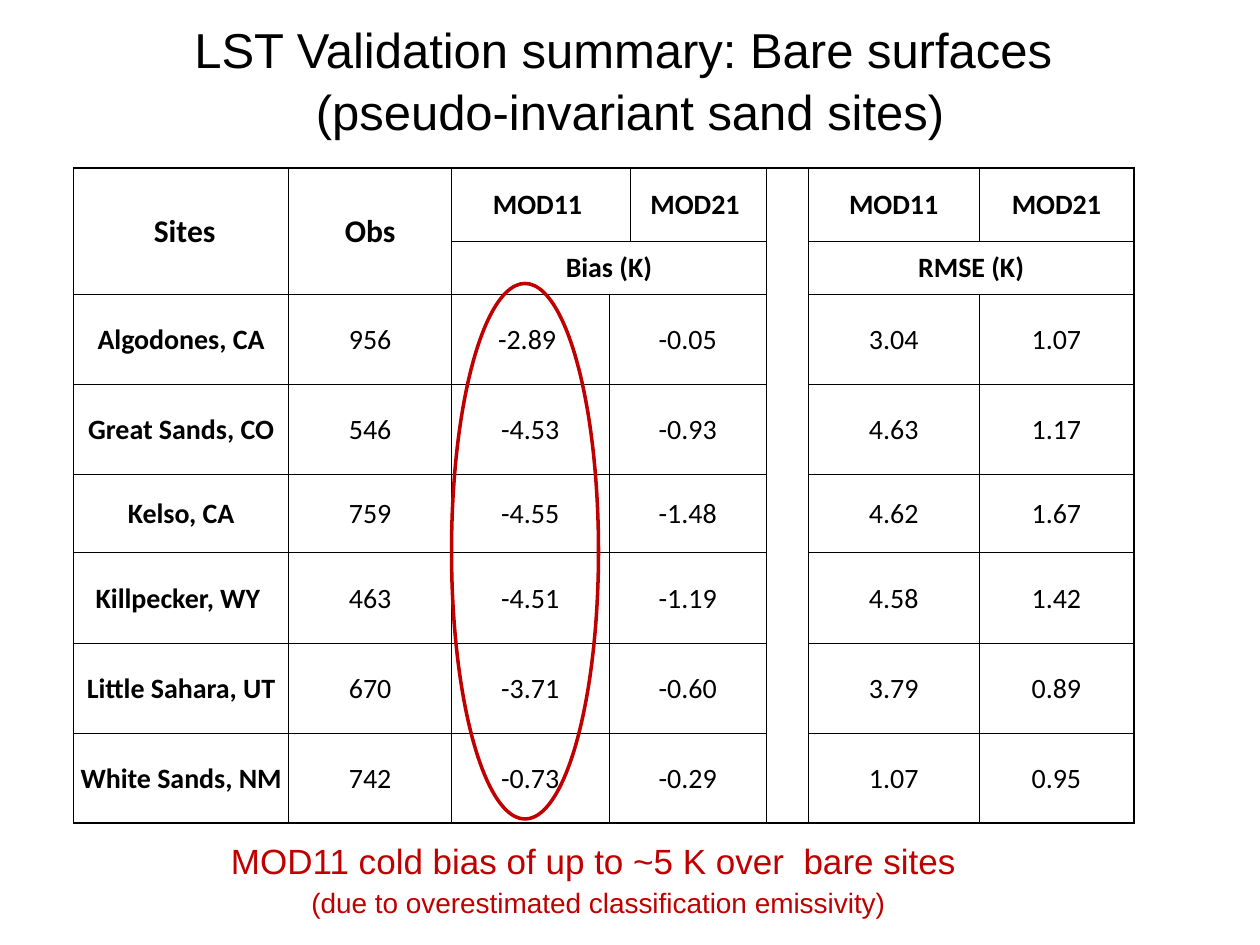
from lxml import etree
from pptx import Presentation
from pptx.dml import color
from pptx.enum import shapes, text
from pptx.oxml import ns
from pptx.util import Pt

BLACK, WHITE, RED = "000000", "FFFFFF", "C00000"
COLUMN_WIDTHS = [123, 93, 90, 12, 78, 24, 97.5, 88.5]
ROW_HEIGHTS = [42, 30, 51.5, 51.5, 45, 51.5, 51.5, 51.5]
GAP_COLUMN = 5
HEADER_ROWS = 2
UNFILLED_ROWS = {0, 1, 3, 4}
HEADINGS = {
    (0, 0): "\N{NO-BREAK SPACE}Sites",
    (0, 1): "Obs",
    (0, 2): "MOD11 ",
    (0, 4): "MOD21 ",
    (0, 6): "MOD11",
    (0, 7): "MOD21",
    (1, 2): "Bias (K)",
    (1, 6): "RMSE (K)",
}
HEADING_SPANS = [(0, 0, 1, 0), (0, 1, 1, 1), (0, 2, 0, 3), (1, 2, 1, 4), (1, 6, 1, 7)]
SITES = [
    ("Algodones, CA", "956", "-2.89 ", "-0.05", "3.04", "1.07"),
    ("Great Sands, CO", "546", "-4.53", "-0.93", "4.63", "1.17"),
    ("Kelso, CA", "759", "-4.55", "-1.48", "4.62", "1.67"),
    ("Killpecker, WY ", "463", "-4.51", "-1.19", "4.58", "1.42"),
    ("Little Sahara, UT", "670", "-3.71", "-0.60", "3.79", "0.89"),
    ("White Sands, NM", "742", "-0.73", "-0.29", "1.07", "0.95"),
]
SITE_COLUMNS = [0, 1, 2, 3, 6, 7]


def rgb(value):
    return color.RGBColor.from_string(value)


def place(shape, box):
    shape.left, shape.top, shape.width, shape.height = map(Pt, box)


def write_lines(frame, lines, font_color, spacing):
    frame.word_wrap = True
    frame.auto_size = text.MSO_AUTO_SIZE.NONE
    frame.vertical_anchor = text.MSO_ANCHOR.TOP
    for index, (line, size) in enumerate(lines):
        paragraph = frame.add_paragraph() if index else frame.paragraphs[0]
        paragraph.text = line
        paragraph.alignment = text.PP_ALIGN.CENTER
        paragraph.line_spacing = spacing
        paragraph.font.name = "Arial"
        paragraph.font.size = Pt(size)
        paragraph.font.color.rgb = rgb(font_color)


def add_title(slide, box):
    title = slide.shapes.title
    place(title, box)
    lines = [
        ("LST Validation summary: Bare surfaces ", 28),
        ("(pseudo-invariant sand sites)", 28),
    ]
    write_lines(title.text_frame, lines, BLACK, 1.05)


def add_conclusion(slide, box):
    conclusion = slide.shapes.add_textbox(*map(Pt, box))
    lines = [
        ("MOD11 cold bias of up to ~5 K over  bare sites ", 20),
        ("(due to overestimated classification emissivity)", 16),
    ]
    write_lines(conclusion.text_frame, lines, RED, 1.1)


def set_border(cell, side, width):
    properties = cell._tc.get_or_add_tcPr()
    line = etree.SubElement(properties, ns.qn(f"a:ln{side}"), w=str(Pt(width)))
    if width:
        fill = etree.SubElement(line, ns.qn("a:solidFill"))
        etree.SubElement(fill, ns.qn("a:srgbClr"), val=BLACK)
    else:
        etree.SubElement(line, ns.qn("a:noFill"))


def format_cell(cell, row, column):
    last_row, last_column = len(ROW_HEIGHTS) - 1, len(COLUMN_WIDTHS) - 1
    inner = 0 if column == GAP_COLUMN else 0.5
    set_border(cell, "L", 1 if column == 0 else 0.5)
    set_border(cell, "R", 1 if column + cell.span_width > last_column else 0.5)
    set_border(cell, "T", 1 if row == 0 else inner)
    set_border(cell, "B", 1 if row + cell.span_height > last_row else inner)
    if row in UNFILLED_ROWS:
        cell.fill.background()
    else:
        cell.fill.solid()
        cell.fill.fore_color.rgb = rgb(WHITE)
    cell.margin_left = cell.margin_right = cell.margin_top = Pt(0.72)
    cell.margin_bottom = 0
    cell.vertical_anchor = text.MSO_ANCHOR.MIDDLE
    paragraph = cell.text_frame.paragraphs[0]
    paragraph.alignment = text.PP_ALIGN.CENTER
    paragraph.font.name = "Calibri"
    paragraph.font.size = Pt(18 if row == 0 and column < 2 else 16)
    paragraph.font.bold = row < HEADER_ROWS or column == 0
    paragraph.font.color.rgb = rgb(BLACK)


def add_validation_table(slide, left, top):
    table = slide.shapes.add_table(
        len(ROW_HEIGHTS), len(COLUMN_WIDTHS), Pt(left), Pt(top),
        Pt(sum(COLUMN_WIDTHS)), Pt(sum(ROW_HEIGHTS)),
    ).table
    table.first_row = table.horz_banding = False
    for column, width in zip(table.columns, COLUMN_WIDTHS):
        column.width = Pt(width)
    for row, height in zip(table.rows, ROW_HEIGHTS):
        row.height = Pt(height)

    site_spans = [(row, 3, row, 4) for row in range(HEADER_ROWS, len(ROW_HEIGHTS))]
    for first_row, first_column, last_row, last_column in HEADING_SPANS + site_spans:
        table.cell(first_row, first_column).merge(table.cell(last_row, last_column))

    entries = dict(HEADINGS)
    for row, site in enumerate(SITES, HEADER_ROWS):
        entries.update({(row, column): value for column, value in zip(SITE_COLUMNS, site)})
    for (row, column), value in entries.items():
        table.cell(row, column).text = value

    for row in range(len(ROW_HEIGHTS)):
        for column in range(len(COLUMN_WIDTHS)):
            cell = table.cell(row, column)
            if not cell.is_spanned:
                format_cell(cell, row, column)


def add_bias_highlight(slide, box):
    highlight = slide.shapes.add_shape(shapes.MSO_SHAPE.OVAL, *map(Pt, box))
    highlight.shadow.inherit = False
    highlight.fill.background()
    highlight.line.color.rgb = rgb(RED)
    highlight.line.width = Pt(2)


def main():
    presentation = Presentation()
    presentation.slide_width, presentation.slide_height = Pt(720), Pt(540)
    slide = presentation.slides.add_slide(presentation.slide_layouts[5])
    add_title(slide, (36, 6, 648, 48))
    add_validation_table(slide, 42, 96)
    add_conclusion(slide, (18, 474, 648, 36))
    add_bias_highlight(slide, (258, 162, 84, 306))
    presentation.save("out.pptx")


if __name__ == "__main__":
    main()
